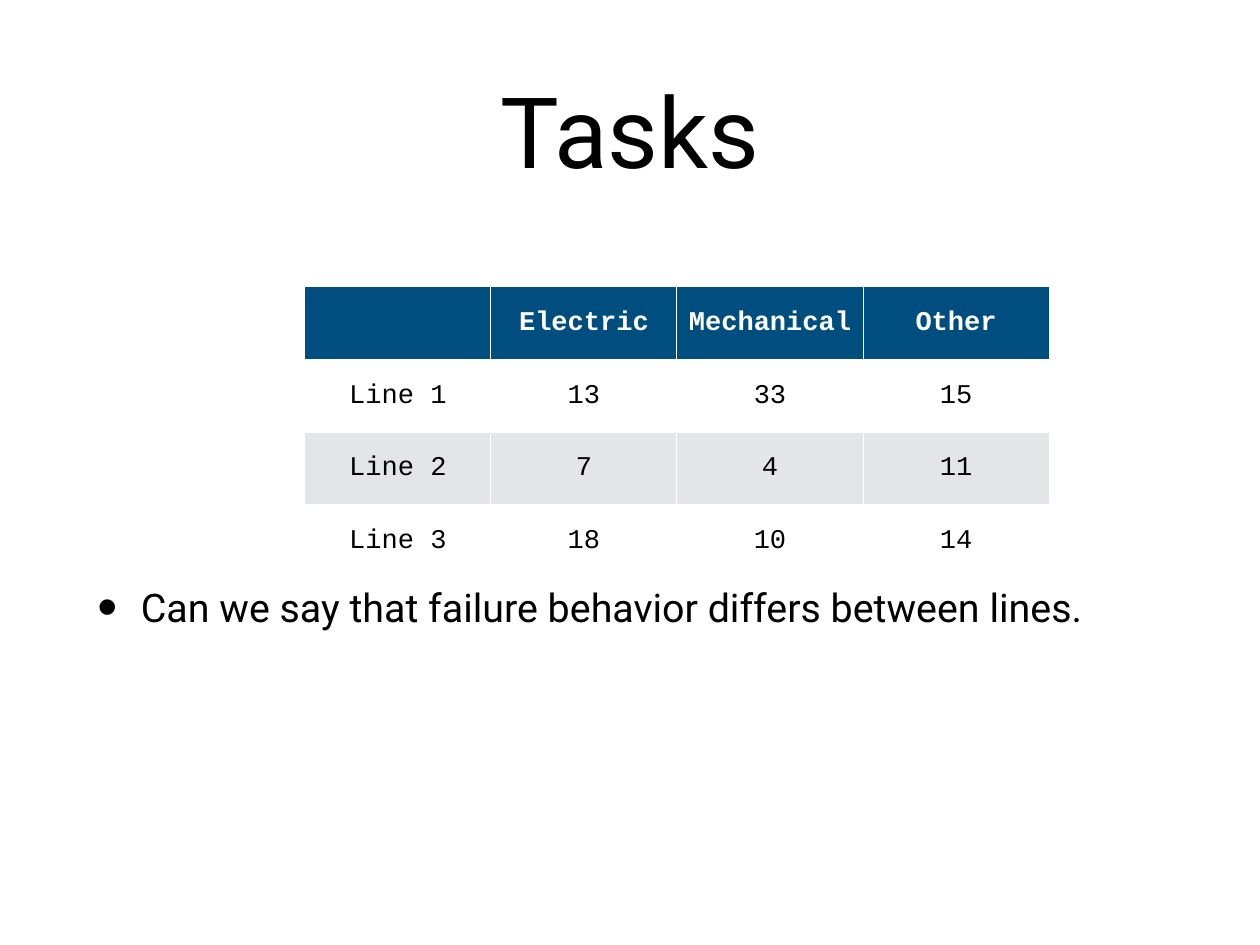
from lxml.etree import SubElement
from pptx import Presentation
from pptx.dml.color import RGBColor
from pptx.enum.text import MSO_ANCHOR, MSO_AUTO_SIZE, PP_ALIGN
from pptx.oxml.ns import qn
from pptx.util import Inches, Pt

TITLE = "Tasks"
POINT = "Can we say that failure behavior differs between lines."
ROWS = [
    ("", "Electric", "Mechanical", "Other"),
    ("Line 1", "13", "33", "15"),
    ("Line 2", "7", "4", "11"),
    ("Line 3", "18", "10", "14"),
]
FILLS = ["004D80", "FFFFFF", "E3E5E8", "FFFFFF"]
WIDE, HIGH = 2.1, 0.82
INSET = Inches(0.06)


def color(code):
    return RGBColor.from_string(code)


def place(shape, left, top, width, height):
    shape.left, shape.top = Inches(left), Inches(top)
    shape.width, shape.height = Inches(width), Inches(height)


def write(frame, text, size, font="Roboto", ink="000000", bold=False,
          align=PP_ALIGN.CENTER):
    para = frame.paragraphs[0]
    para.alignment = align
    run = para.add_run()
    run.text = text
    run.font.size = Pt(size)
    run.font.name = font
    run.font.bold = bold
    run.font.color.rgb = color(ink)
    return para


def inset(item):
    item.margin_left = item.margin_right = INSET
    item.margin_top = item.margin_bottom = INSET


def bullet(para, mark, scale, indent):
    props = para._p.get_or_add_pPr()
    props.set("marL", str(Inches(indent)))
    props.set("indent", str(-Inches(indent)))
    SubElement(props, qn("a:buSzPct"), val=str(scale * 1000))
    SubElement(props, qn("a:buChar"), char=mark)


deck = Presentation()
deck.slide_width, deck.slide_height = Inches(14.22), Inches(10.67)
slide = deck.slides.add_slide(deck.slide_layouts[1])
title, body = slide.placeholders

place(title, 1.04, 0.28, 12.14, 2.36)
place(body, 1.04, 6.52, 12.14, 3.7)
for shape, anchor in ((title, MSO_ANCHOR.MIDDLE), (body, MSO_ANCHOR.TOP)):
    frame = shape.text_frame
    inset(frame)
    frame.auto_size = MSO_AUTO_SIZE.NONE
    frame.vertical_anchor = anchor
write(title.text_frame, TITLE, 80)
point = write(body.text_frame, POINT, 32, align=PP_ALIGN.LEFT)
point.space_before = Pt(22)
bullet(point, "•", 145, 0.49)

count, span = len(ROWS), len(ROWS[0])
table = slide.shapes.add_table(
    count, span, Inches(3.44), Inches(3.24),
    Inches(WIDE * span), Inches(HIGH * count)).table
for col in table.columns:
    col.width = Inches(WIDE)
for r, (row, fill) in enumerate(zip(ROWS, FILLS)):
    table.rows[r].height = Inches(HIGH)
    head = r == 0
    for c, text in enumerate(row):
        cell = table.cell(r, c)
        inset(cell)
        cell.vertical_anchor = MSO_ANCHOR.MIDDLE
        cell.fill.solid()
        cell.fill.fore_color.rgb = color(fill)
        if text:
            write(cell.text_frame, text, 22, font="Courier New", bold=head,
                  ink="FFFFFF" if head else "000000")

deck.save("out.pptx")
